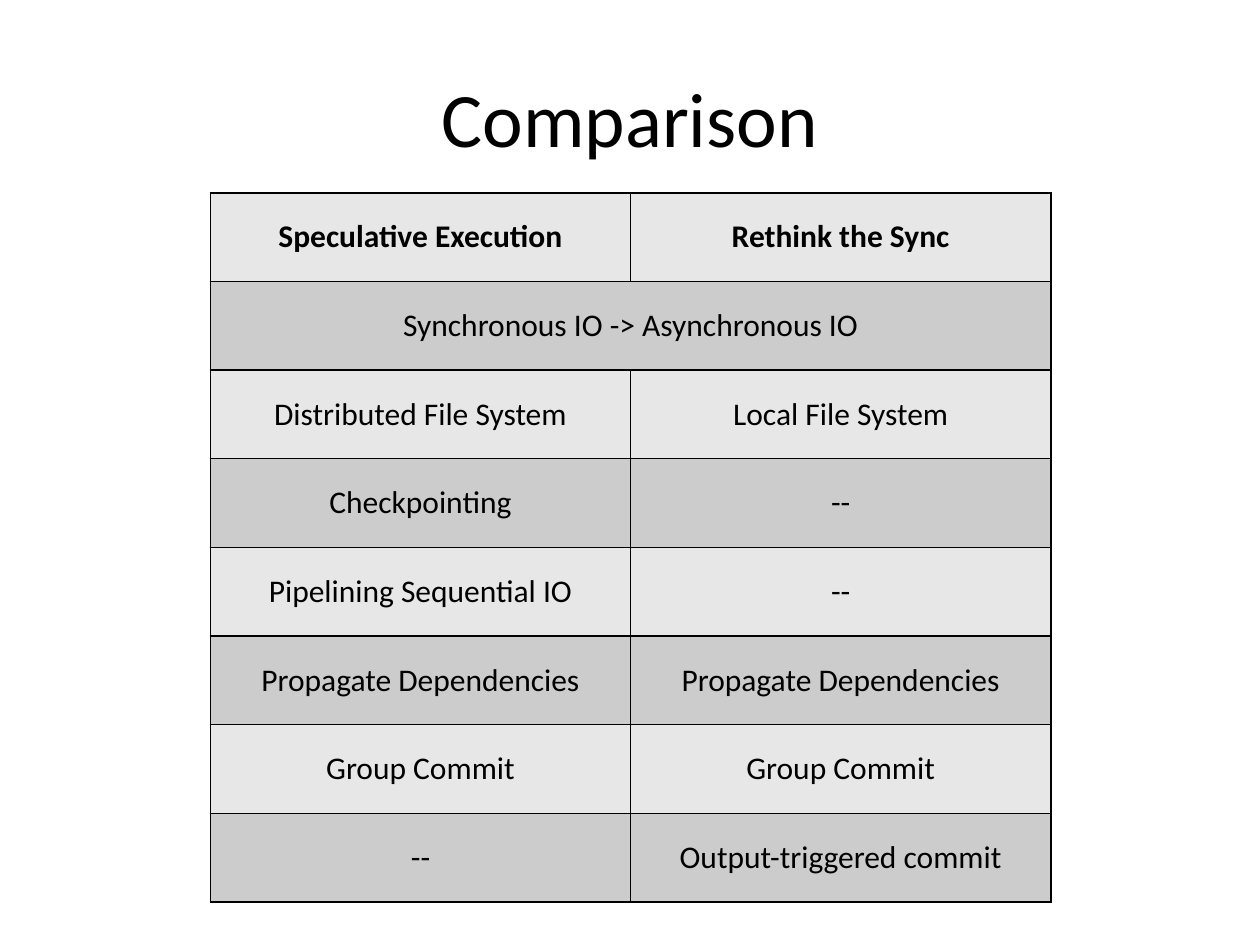
from lxml import etree
from pptx import Presentation
from pptx.dml.color import RGBColor
from pptx.enum import text
from pptx.oxml.ns import qn
from pptx.util import Inches, Pt

COLORS = {"ink": "000000", "light": "E7E7E7", "dark": "CCCCCC"}
FONT = "Calibri"

# None marks a cell that the one to its left spans
ROWS = [
    ("Speculative Execution", "Rethink the Sync"),
    ("Synchronous IO -> Asynchronous IO", None),
    ("Distributed File System", "Local File System"),
    ("Checkpointing", "--"),
    ("Pipelining Sequential IO", "--"),
    ("Propagate Dependencies", "Propagate Dependencies"),
    ("Group Commit", "Group Commit"),
    ("--", "Output-triggered commit"),
]


def rgb(name):
    return RGBColor.from_string(COLORS[name])


def write(tf, content, size=18, bold=False, color="ink"):
    p = tf.paragraphs[0]
    p.alignment = text.PP_ALIGN.CENTER
    r = p.add_run()
    r.text = content
    r.font.name = FONT
    r.font.size = Pt(size)
    r.font.bold = bold
    r.font.color.rgb = rgb(color)


def add_borders(cell, width=1, color="ink"):
    tc_pr = cell._tc.get_or_add_tcPr()
    for side in ("lnL", "lnR", "lnT", "lnB"):
        ln = etree.SubElement(tc_pr, qn(f"a:{side}"), w=str(Pt(width)))
        fill = etree.SubElement(ln, qn("a:solidFill"))
        etree.SubElement(fill, qn("a:srgbClr"), val=COLORS[color])


def place_title(s, left, top, width, height):
    sp = s.shapes.title
    sp.left, sp.top = Inches(left), Inches(top)
    sp.width, sp.height = Inches(width), Inches(height)
    sp.text_frame.vertical_anchor = text.MSO_ANCHOR.MIDDLE
    write(sp.text_frame, "Comparison", size=44)


def place_comparison(s, left, top, width, height):
    table = s.shapes.add_table(len(ROWS), 2, Inches(left), Inches(top),
                               Inches(width), Inches(height)).table
    table.horz_banding = False
    for i, row in enumerate(ROWS):
        for j, content in enumerate(row):
            cell = table.cell(i, j)
            add_borders(cell)
            cell.fill.solid()
            cell.fill.fore_color.rgb = rgb("dark" if i % 2 else "light")
            cell.vertical_anchor = text.MSO_ANCHOR.MIDDLE
            if content is None:
                table.cell(i, j - 1).merge(cell)
            else:
                write(cell.text_frame, content, bold=i == 0)


def main():
    prs = Presentation()
    prs.slide_width, prs.slide_height = Inches(10), Inches(7.5)
    s = prs.slides.add_slide(prs.slide_layouts[5])  # title only
    place_title(s, 0.5, 0.3, 9, 1.25)
    place_comparison(s, 1.67, 1.53, 6.67, 5.63)
    prs.save("out.pptx")


if __name__ == "__main__":
    main()
